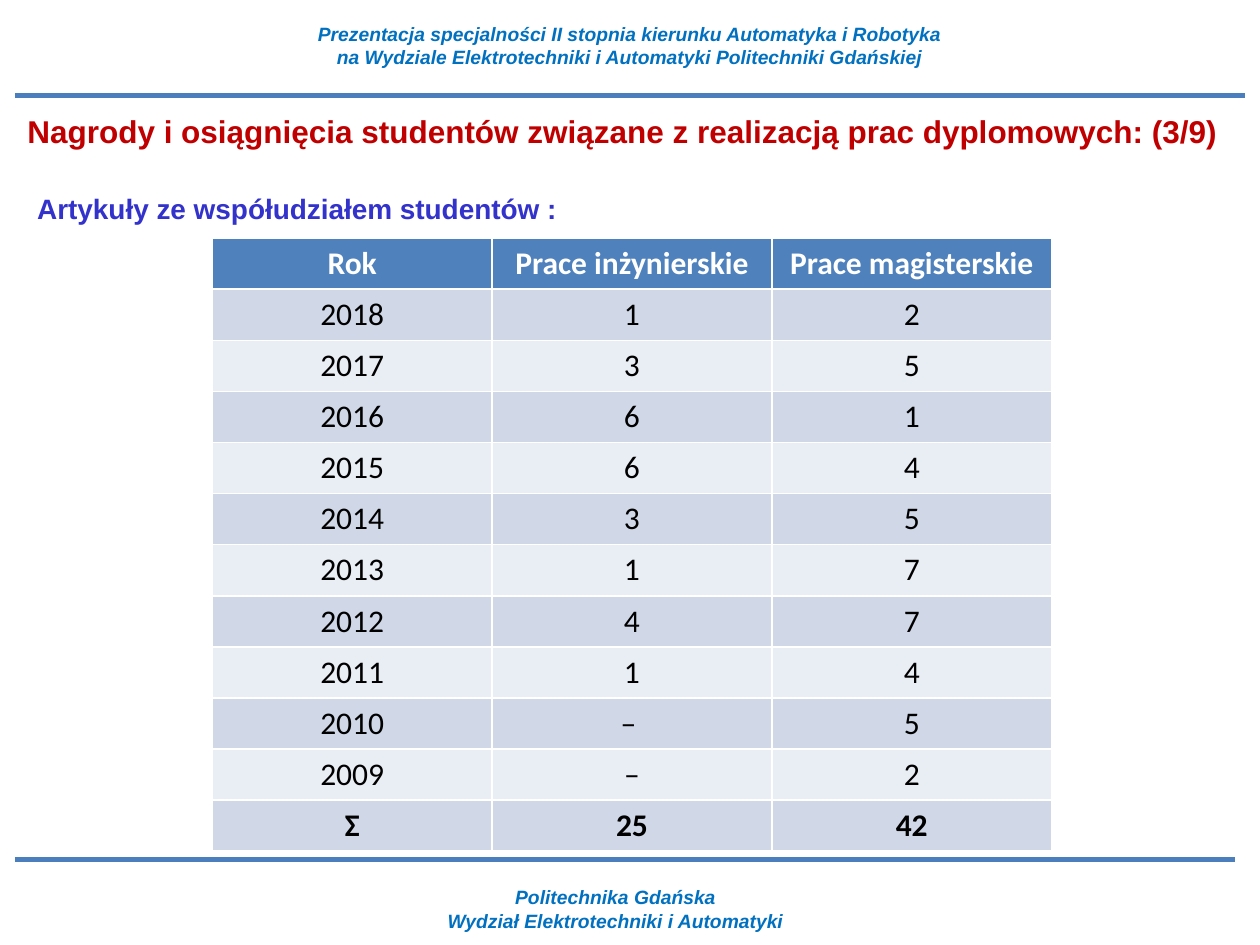
from dataclasses import dataclass

from lxml import etree
from pptx import Presentation
from pptx.dml.color import RGBColor
from pptx.enum.shapes import MSO_CONNECTOR
from pptx.enum.text import MSO_ANCHOR, MSO_AUTO_SIZE, PP_ALIGN
from pptx.oxml.ns import qn
from pptx.util import Cm, Pt

STRAIGHT = MSO_CONNECTOR.STRAIGHT
TOP = MSO_ANCHOR.TOP
FIT_SHAPE = MSO_AUTO_SIZE.SHAPE_TO_FIT_TEXT
LEFT, CENTER = PP_ALIGN.LEFT, PP_ALIGN.CENTER


@dataclass(frozen=True)
class Theme:
    rule = RGBColor(0x4B, 0x7E, 0xBC)
    header_fill = RGBColor(0x4F, 0x81, 0xBD)
    band_fills = (RGBColor(0xD0, 0xD8, 0xE8), RGBColor(0xE9, 0xED, 0xF4))
    banner = {"name": "Arial", "size": Pt(11), "bold": True, "italic": True,
              "color": RGBColor(0x00, 0x70, 0xC0)}
    title = {"name": "Arial", "size": Pt(18), "bold": True,
             "color": RGBColor(0xC0, 0x00, 0x00)}
    subtitle = {"name": "Arial", "size": Pt(16), "bold": True,
                "color": RGBColor(0x33, 0x33, 0xCC)}
    table_header = {"name": "Calibri", "size": Pt(18), "bold": True,
                    "color": RGBColor(0xFF, 0xFF, 0xFF)}
    table_body = {**table_header, "bold": False, "color": RGBColor(0, 0, 0)}
    table_total = {**table_body, "bold": True}


class SlideBuilder:
    def __init__(self, slide, theme):
        self.slide = slide
        self.theme = theme

    def format_text(self, text_frame, style, alignment):
        for paragraph in text_frame.paragraphs:
            paragraph.alignment = alignment
            for run in paragraph.runs:
                for attribute, value in style.items():
                    if attribute == "color":
                        run.font.color.rgb = value
                    else:
                        setattr(run.font, attribute, value)

    def text(self, content, box, style, alignment=CENTER, wrap=True):
        shape = self.slide.shapes.add_textbox(*map(Cm, box))
        text_frame = shape.text_frame
        text_frame.text = content
        frame_format = {"word_wrap": wrap, "auto_size": FIT_SHAPE,
                        "vertical_anchor": TOP}
        for attribute, value in frame_format.items():
            setattr(text_frame, attribute, value)
        self.format_text(text_frame, style, alignment)

    def rule(self, left, right, top):
        connector = self.slide.shapes.add_connector(
            STRAIGHT, Cm(left), Cm(top), Cm(right), Cm(top))
        connector.line.color.rgb = self.theme.rule
        connector.line.width = Pt(3)
        etree.SubElement(connector._element.spPr, qn("a:effectLst"))

    def table(self, rows, left, top, column_width, row_height):
        column_count = len(rows[0])
        table = self.slide.shapes.add_table(
            len(rows), column_count, Cm(left), Cm(top),
            Cm(column_width * column_count), Cm(row_height * len(rows))).table
        for column in table.columns:
            column.width = Cm(column_width)
        for row_index, values in enumerate(rows):
            table.rows[row_index].height = Cm(row_height)
            fill, style = self.row_format(row_index, len(rows) - 1)
            for column_index, value in enumerate(values):
                cell = table.cell(row_index, column_index)
                cell.text = value
                cell.fill.solid()
                cell.fill.fore_color.rgb = fill
                self.format_text(cell.text_frame, style, CENTER)

    def row_format(self, row_index, last_index):
        if row_index == 0:
            return self.theme.header_fill, self.theme.table_header
        fill = self.theme.band_fills[(row_index - 1) % 2]
        if row_index == last_index:
            return fill, self.theme.table_total
        return fill, self.theme.table_body


ARTICLES = [
    ("Rok", "Prace inżynierskie", "Prace magisterskie"),
    ("2018", "1", "2"),
    ("2017", "3", "5"),
    ("2016", "6", "1"),
    ("2015", "6", "4"),
    ("2014", "3", "5"),
    ("2013", "1", "7"),
    ("2012", "4", "7"),
    ("2011", "1", "4"),
    ("2010", "– ", "5"),
    ("2009", "–", "2"),
    ("Σ", "25", "42"),
]


def main():
    presentation = Presentation()
    presentation.slide_width = Cm(25.4)
    presentation.slide_height = Cm(19.05)
    slide = presentation.slides.add_slide(presentation.slide_layouts[6])
    theme = Theme()
    builder = SlideBuilder(slide, theme)

    builder.text("Politechnika Gdańska\vWydział Elektrotechniki i Automatyki",
                 (4.5, 17.73, 15.82, 1.19), theme.banner)
    builder.rule(0.3, 24.9, 17.32)
    builder.rule(0.3, 25.1, 1.93)
    builder.text(
        "Prezentacja specjalności II stopnia kierunku Automatyka i Robotyka\n"
        "na Wydziale Elektrotechniki i Automatyki Politechniki Gdańskiej",
        (1.5, 0.33, 22.4, 1.19), theme.banner)
    builder.text("Artykuły ze współudziałem studentów :",
                 (0.5, 3.73, 11.13, 0.94), theme.subtitle, LEFT, wrap=False)
    builder.text(
        "Nagrody i osiągnięcia studentów związane z realizacją prac "
        "dyplomowych: (3/9)",
        (0, 2.13, 25.1, 1.02), theme.title)
    builder.table(ARTICLES, 4.28, 4.8, 5.64, 1.03)

    presentation.save("out.pptx")


if __name__ == "__main__":
    main()
